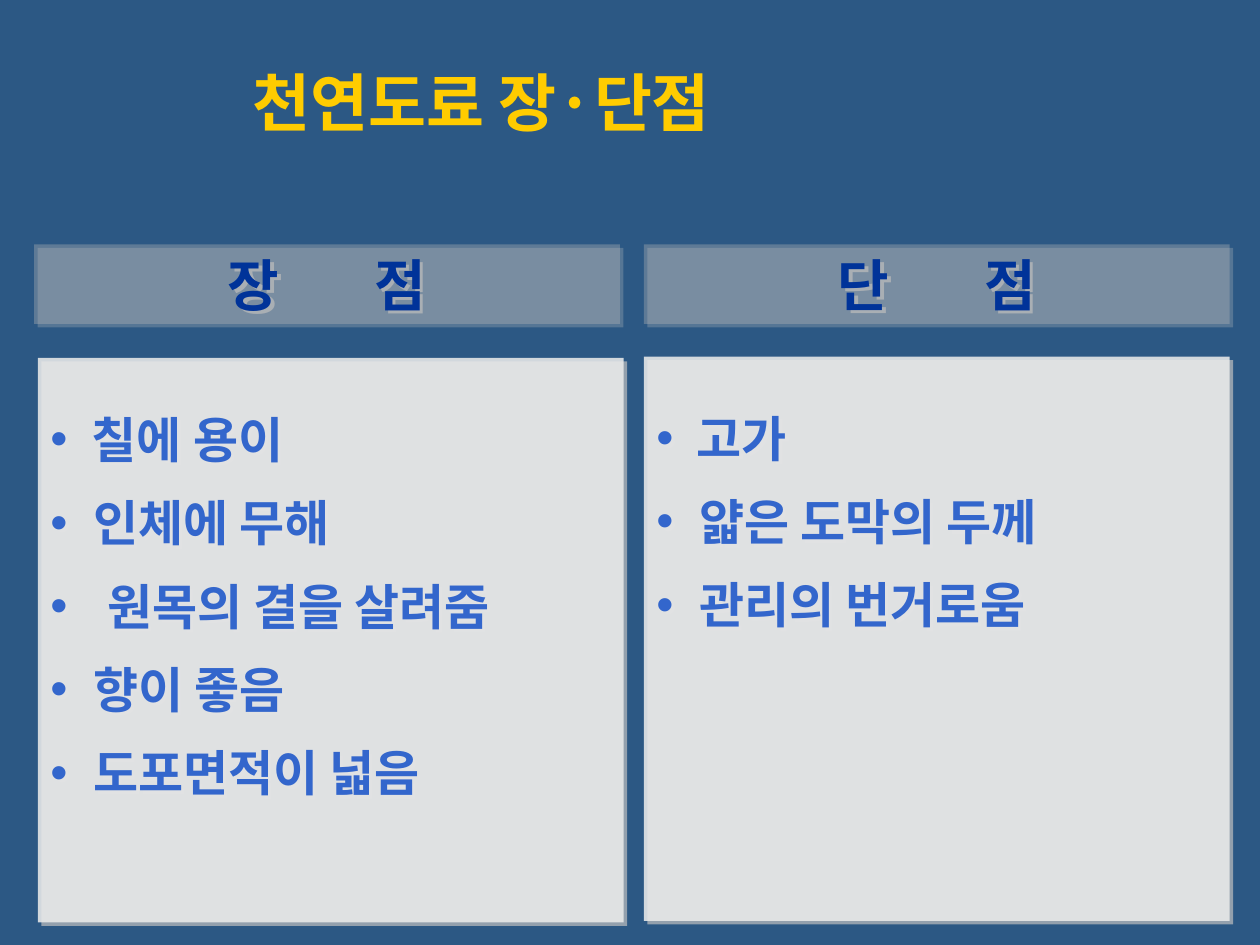
"""Builds a slide comparing the pros and cons of natural paint."""
from lxml.etree import SubElement
from pptx import Presentation
from pptx.dml.color import RGBColor
from pptx.enum.text import MSO_ANCHOR as Anchor, MSO_AUTO_SIZE as AutoSize, PP_ALIGN as Align
from pptx.oxml.ns import qn
from pptx.util import Inches, Pt

FONT = "Noto Sans CJK KR"
TITLE = "천연도료 장·단점"
COLUMNS = [
    {"head": "장 점", "left": 0.27, "body": (0.3, 2.84),
     "items": [("칠에 용이", 0.33), ("인체에 무해", 0.34), ("원목의 결을 살려줌", 0.45),
               ("향이 좋음", 0.34), ("도포면적이 넓음", 0.34)]},
    {"head": "단 점", "left": 5.11, "body": (5.11, 2.83),
     "items": [("고가", 0.32), ("얇은 도막의 두께", 0.34), ("관리의 번거로움", 0.34)]},
]
WIDTH, HEAD_TOP, HEAD_H, BODY_H = 4.65, 1.94, 0.63, 4.48


def rgb(color):
    return RGBColor.from_string(color)


def add_run(p, text, size, color):
    r = p.add_run()
    r.text = text
    r.font.size, r.font.bold, r.font.name = Pt(size), True, FONT
    r.font.color.rgb = rgb(color)
    r.font._element.set("kern", "0")
    SubElement(r.font._element, qn("a:ea"), typeface=FONT)
    return r


def place(sp, left, top, width, height, anchor):
    sp.left, sp.top, sp.width, sp.height = map(Inches, (left, top, width, height))
    tf = sp.text_frame
    tf.auto_size, tf.vertical_anchor = AutoSize.NONE, anchor
    return tf


def style_panel(sp, color, opacity):
    sp.fill.solid()
    sp.fill.fore_color.rgb = rgb(color)
    fill = sp._element.spPr.find(qn("a:solidFill"))
    SubElement(fill[0], qn("a:alpha"), val=str(opacity * 1000))
    sp.shadow.inherit = False
    effects = sp._element.spPr.find(qn("a:effectLst"))
    shadow = SubElement(effects, qn("a:outerShdw"), dist=str(Pt(2.8)),
                        dir="2700000", algn="ctr", rotWithShape="0")
    tint = SubElement(shadow, qn("a:srgbClr"), val="C0C0C0")
    SubElement(tint, qn("a:alpha"), val="80000")


def add_heading(sp, text, left):
    tf = place(sp, left, HEAD_TOP, WIDTH, HEAD_H, Anchor.MIDDLE)
    style_panel(sp, "B6B6B6", 37)
    p = tf.paragraphs[0]
    p.alignment, p.space_before = Align.CENTER, Pt(0)
    for char in text:
        r = add_run(p, char, 32, "003399")
        if char == " ":
            r.font._element.set("spc", "4700")


def add_list(sp, items, left, top):
    tf = place(sp, left, top, WIDTH, BODY_H, Anchor.TOP)
    style_panel(sp, "EAEAEA", 88)
    tf.margin_top = Inches(0.41)
    for i, (text, indent) in enumerate(items):
        p = tf.add_paragraph() if i else tf.paragraphs[0]
        p.space_before = Pt(14 if i else 0)
        pPr = p._p.get_or_add_pPr()
        pPr.set("marL", str(Inches(indent)))
        pPr.set("indent", str(-Inches(indent)))
        SubElement(pPr, qn("a:buChar"), char="•")
        add_run(p, text, 28, "3366CC")


def main():
    prs = Presentation()
    prs.slide_width, prs.slide_height = Inches(10), Inches(7.5)
    slide = prs.slides.add_slide(prs.slide_layouts.get_by_name("Comparison"))
    slide.background.fill.solid()
    slide.background.fill.fore_color.rgb = rgb("2C5884")
    title, *panels = [sp for sp in slide.placeholders if sp.placeholder_format.idx < 5]

    tf = place(title, 0.75, 0.44, 6.14, 1.1, Anchor.TOP)
    tf.word_wrap, tf.margin_top = False, Inches(0.06)
    p = tf.paragraphs[0]
    p.alignment = Align.CENTER
    add_run(p, TITLE, 36, "FFCC00")

    for col, head, body in zip(COLUMNS, panels[::2], panels[1::2]):
        add_heading(head, col["head"], col["left"])
        add_list(body, col["items"], *col["body"])
    prs.save("out.pptx")


if __name__ == "__main__":
    main()
